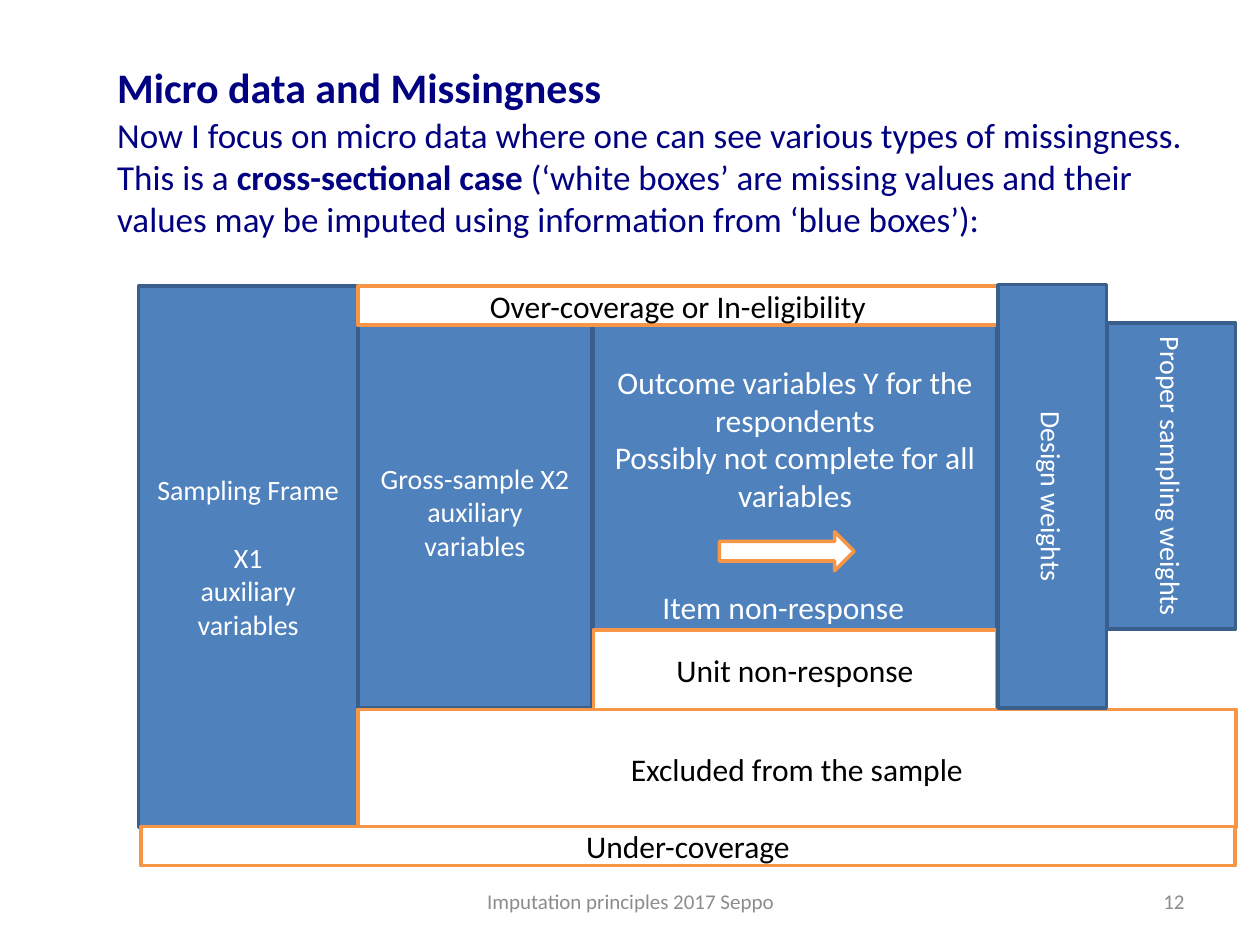
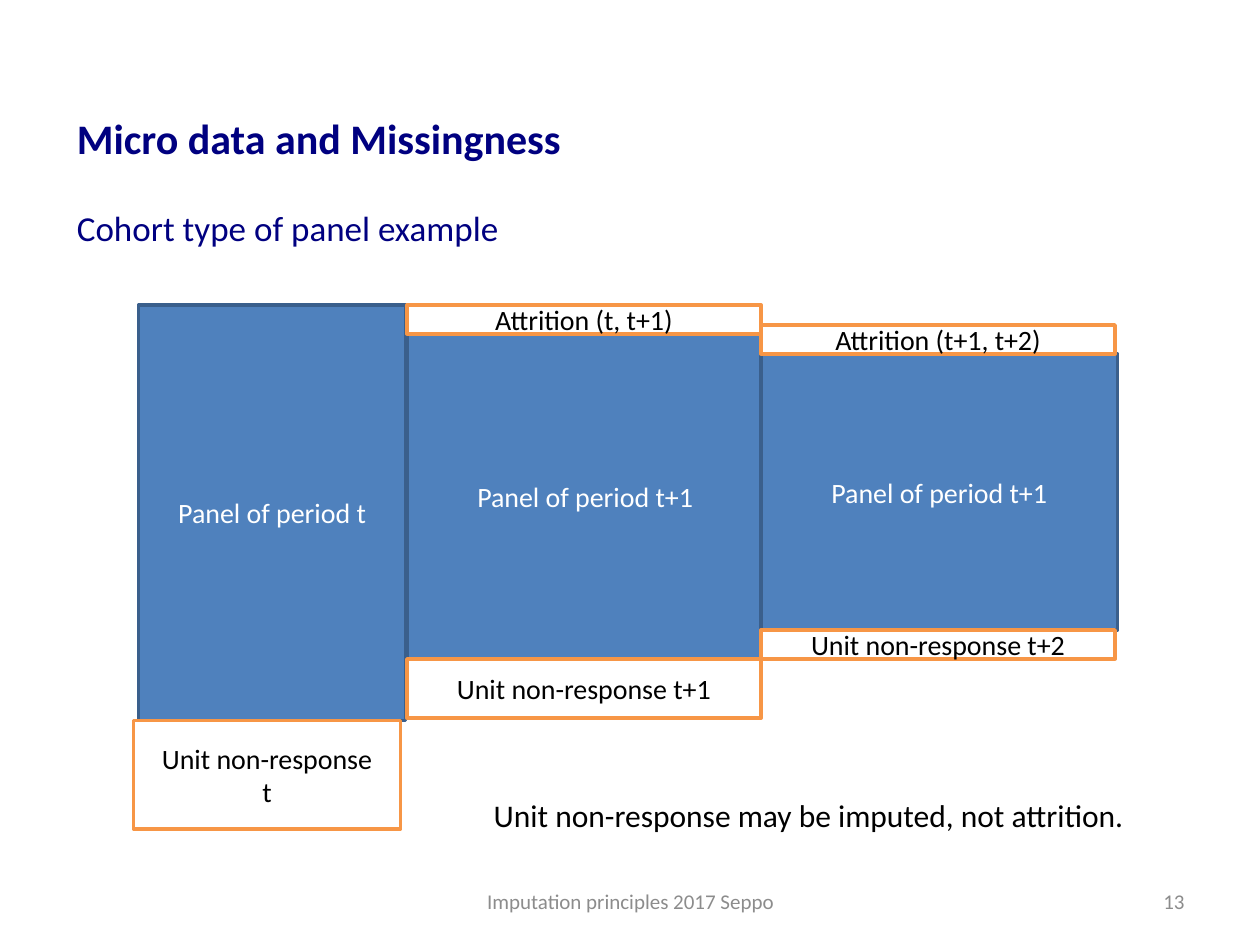
import pptx
import pptx.util
import pptx.dml.color
import pptx.enum.shapes
import pptx.enum.text
import pptx.oxml.ns
import lxml.etree

PX = 9144
FONT = "Calibri"
NAVY, BLACK, WHITE, GREY = "000080", "000000", "FFFFFF", "8C8C8C"
KNOWN = ("4F81BD", "3A5F8C", WHITE)
MISSING = (WHITE, "F79646", BLACK)
SHAPES = pptx.enum.shapes.MSO_SHAPE
ALIGN = pptx.enum.text.PP_ALIGN
ANCHOR = pptx.enum.text.MSO_ANCHOR
HEADING = "Micro data and Missingness"
FOOTER = "Imputation principles 2017 Seppo"


def px(count):
    """Turn px into EMU."""
    return pptx.util.Emu(count * PX)


def rgb(value):
    """Turn a hex string into a colour."""
    return pptx.dml.color.RGBColor.from_string(value)


class Deck:
    """Hold the shared style and the current slide."""

    def __init__(self):
        """Open an empty presentation of 1000 by 750 px."""
        self.presentation = pptx.Presentation()
        self.presentation.slide_width = px(1000)
        self.presentation.slide_height = px(750)
        self.slide = None

    def style(self, frame, size, color, align, anchor):
        """Format all the text of a frame."""
        frame.vertical_anchor = anchor
        for paragraph in frame.paragraphs:
            paragraph.alignment = align
            for run in paragraph.runs:
                run.font.name = FONT
                run.font.size = pptx.util.Pt(size)
                run.font.color.rgb = rgb(color)

    def new_slide(self, number):
        """Start a slide with its footer and number."""
        layout = self.presentation.slide_layouts[1]
        self.slide = self.presentation.slides.add_slide(layout)
        self.text(FOOTER, 342, 695, 317, 40, 12, GREY, ALIGN.CENTER, ANCHOR.MIDDLE)
        self.text(str(number), 717, 695, 233, 40, 12, GREY, ALIGN.RIGHT, ANCHOR.MIDDLE)

    def place(self, placeholder, left, top, width, height):
        """Move a placeholder and switch off its fitting."""
        placeholder.left, placeholder.top = px(left), px(top)
        placeholder.width, placeholder.height = px(width), px(height)
        placeholder.text_frame.word_wrap = True
        placeholder.text_frame.auto_size = pptx.enum.text.MSO_AUTO_SIZE.NONE

    def title(self, left, top, width):
        """Write the shared heading."""
        heading = self.slide.shapes.title
        self.place(heading, left, top, width, 50)
        heading.text_frame.text = HEADING
        self.style(heading.text_frame, 24, NAVY, ALIGN.LEFT, ANCHOR.TOP)
        heading.text_frame.paragraphs[0].runs[0].font.bold = True

    def lead(self, parts, left, top, width, height):
        """Write the introduction from parts of text and boldness."""
        body = self.slide.placeholders[1]
        self.place(body, left, top, width, height)
        paragraph = body.text_frame.paragraphs[0]
        for words, bold in parts:
            run = paragraph.add_run()
            run.text = words
            run.font.bold = bold
        self.style(body.text_frame, 20, NAVY, ALIGN.LEFT, ANCHOR.TOP)
        paragraph.space_before = pptx.util.Pt(0)
        properties = paragraph._p.get_or_add_pPr()
        properties.set("marL", "0")
        properties.set("indent", "0")
        lxml.etree.SubElement(properties, pptx.oxml.ns.qn("a:buNone"))

    def text(self, words, left, top, width, height, size, color,
             align=ALIGN.LEFT, anchor=ANCHOR.TOP, wrap=True):
        """Add free text."""
        label = self.slide.shapes.add_textbox(px(left), px(top), px(width), px(height))
        label.text_frame.word_wrap = wrap
        label.text_frame.text = words
        self.style(label.text_frame, size, color, align, anchor)

    def box(self, words, left, top, width, height, look, size=16,
            rotation=0, preset=SHAPES.RECTANGLE):
        """Add a filled shape with centred words and return its frame."""
        fill, line, color = look
        block = self.slide.shapes.add_shape(preset, px(left), px(top), px(width), px(height))
        block.shadow.inherit = False
        block.rotation = rotation
        block.fill.solid()
        block.fill.fore_color.rgb = rgb(fill)
        block.line.color.rgb = rgb(line)
        block.line.width = pptx.util.Pt(2)
        block.text_frame.word_wrap = True
        block.text_frame.text = words
        self.style(block.text_frame, size, color, ALIGN.CENTER, ANCHOR.MIDDLE)
        return block.text_frame


def cross_section(deck):
    """Build the slide on cross-sectional missingness."""
    deck.new_slide(12)
    deck.title(83, 44, 898)
    deck.lead([
        ("Now I focus on micro data where one can see various types of missingness. "
         "This is a ", False),
        ("cross-sectional case ", True),
        ("(‘white boxes’ are missing values and their values may be imputed using "
         "information from ‘blue boxes’):", False),
    ], 83, 85, 898, 110)
    frame = deck.box("Sampling Frame\nX1\nauxiliary\nvariables", 110, 227, 174, 430, KNOWN)
    frame.paragraphs[1].space_before = pptx.util.Pt(19.5)
    deck.box("Gross-sample X2 auxiliary\nvariables", 284, 250, 186, 312, KNOWN)
    outcome = deck.box("Outcome variables Y for the respondents\n"
                       "Possibly not complete for all variables",
                       471, 250, 320, 250, KNOWN, 18)
    outcome.margin_bottom = px(59)
    for gap, left, top, width, height in [
        ("Over-coverage or In-eligibility", 284, 227, 508, 31),
        ("Unit non-response", 471, 500, 320, 63),
        ("Excluded from the sample", 284, 563, 697, 94),
        ("Under-coverage", 112, 656, 868, 31),
    ]:
        deck.box(gap, left, top, width, height, MISSING, 18)
    deck.box("Design weights", 667, 351, 336, 86, KNOWN, rotation=90)
    deck.box("Proper sampling weights", 808, 327, 243, 102, KNOWN, rotation=90)
    deck.box("", 571, 422, 107, 31, MISSING, preset=SHAPES.RIGHT_ARROW)
    deck.text("Item non-response", 516, 462, 214, 40, 18, WHITE, wrap=False)


def cohort_panel(deck):
    """Build the slide on the cohort type of panel."""
    deck.new_slide(13)
    deck.title(51, 84, 923)
    deck.lead([("Cohort type of panel example", False)], 51, 159, 923, 45)
    deck.box("Panel of period t", 110, 242, 212, 330, KNOWN)
    deck.box("Unit non-response\nt", 106, 572, 212, 86, MISSING)
    strip, wave_width = 23, 281
    waves = [("t, t+1", "t+1", 265, 258, 47), ("t+1, t+2", "t+2", 281, 219, strip)]
    for index, (periods, period, top, height, unit_height) in enumerate(waves):
        left = 323 + index * wave_width
        deck.box("Panel of period t+1", left, top, wave_width + 2, height, KNOWN)
        deck.box(f"Attrition ({periods})", left, top - strip, wave_width, strip, MISSING)
        deck.box(f"Unit non-response {period}", left, top + height, wave_width,
                 unit_height, MISSING)
    deck.text("Unit non-response may be imputed, not attrition.",
              382, 627, 535, 40, 18, BLACK)


def main():
    """Build and save the slides."""
    deck = Deck()
    cross_section(deck)
    cohort_panel(deck)
    deck.presentation.save("out.pptx")


if __name__ == "__main__":
    main()
